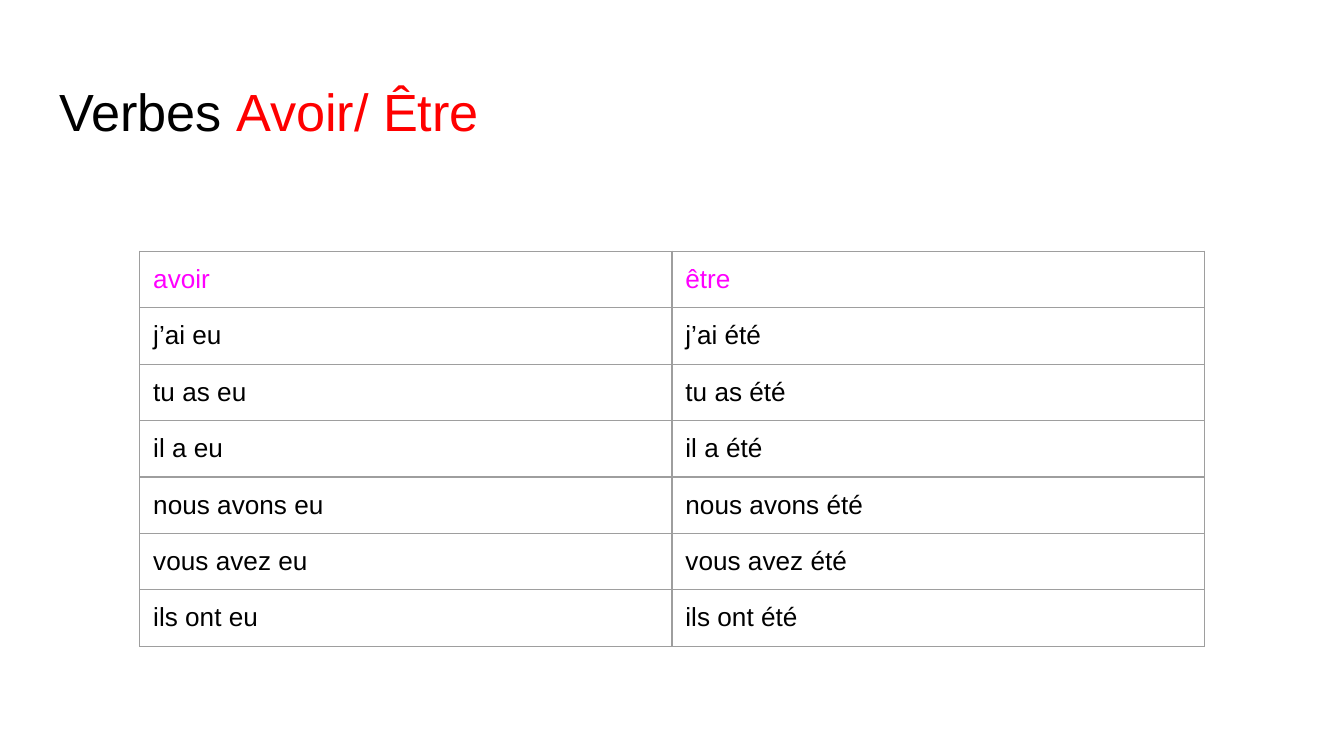
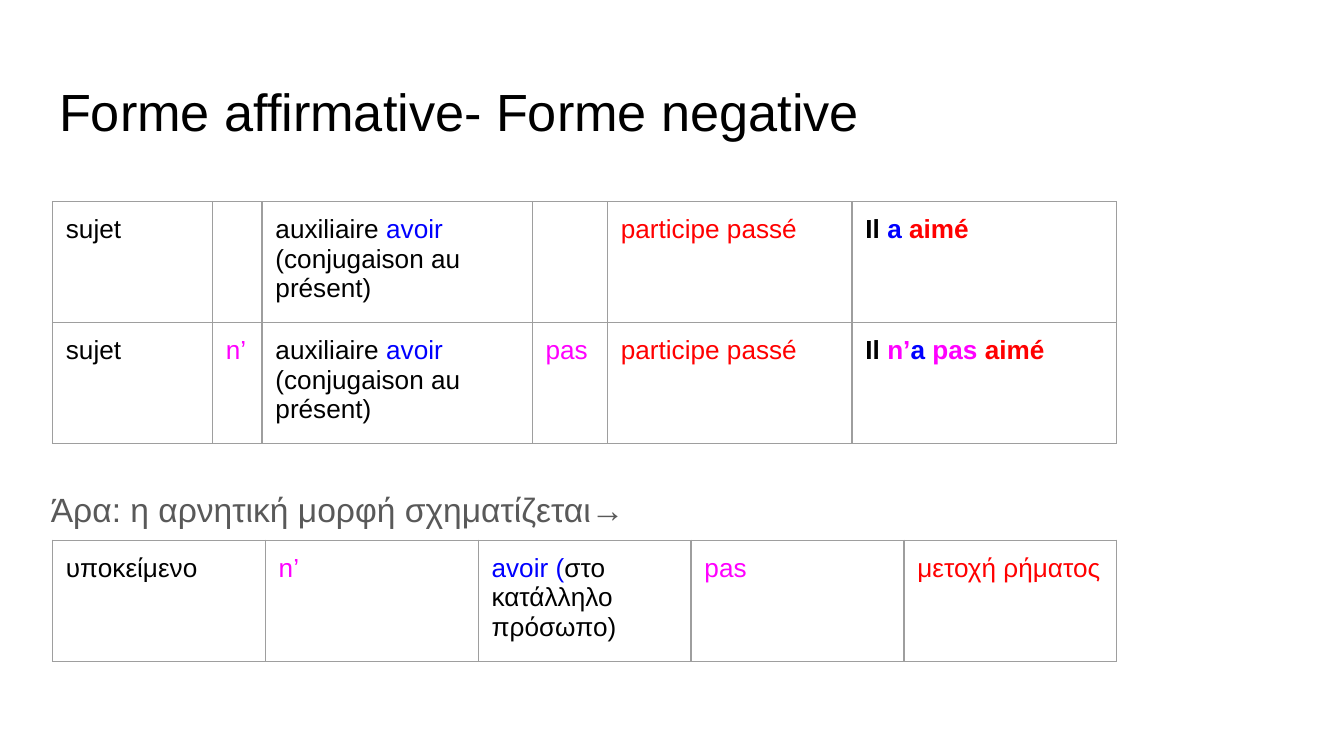
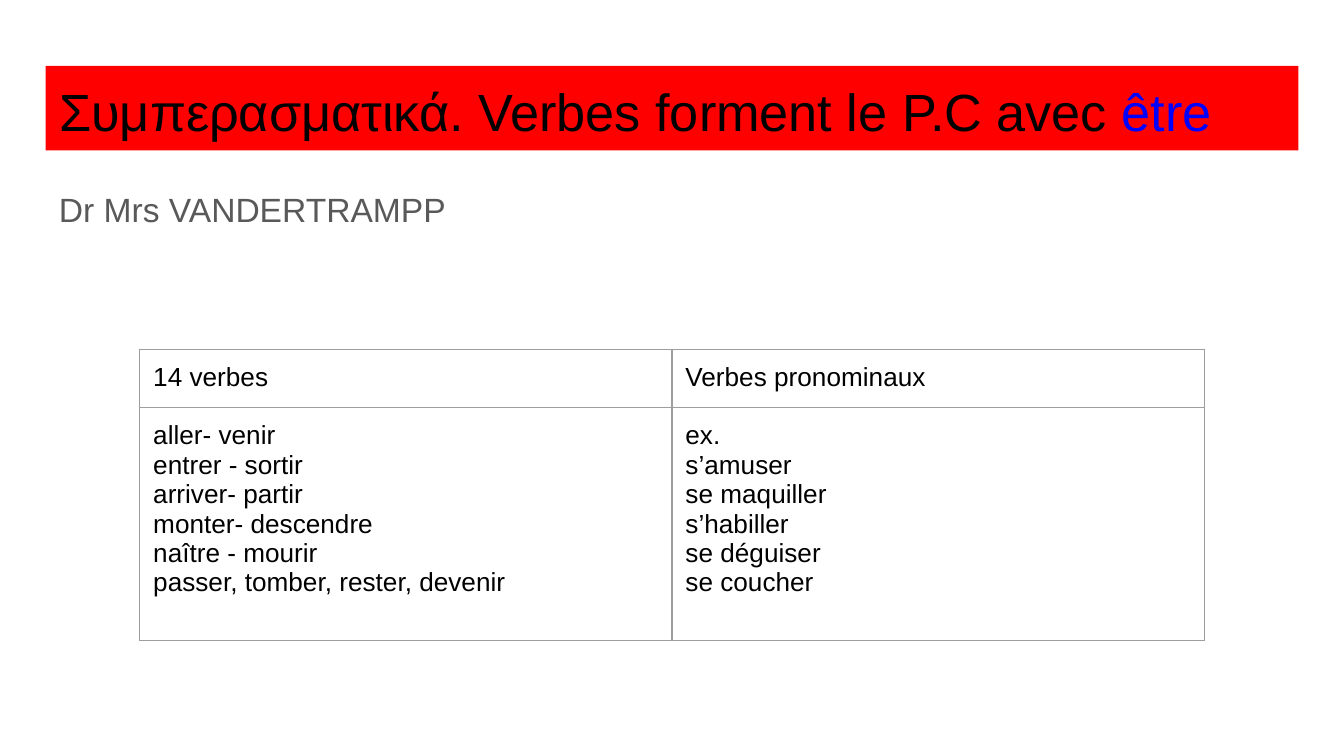
from pptx import Presentation
from pptx.dml.color import RGBColor
from pptx.enum.text import MSO_ANCHOR, MSO_AUTO_SIZE, PP_ALIGN
from pptx.oxml import parse_xml
from pptx.oxml.ns import nsdecls
from pptx.util import Inches, Pt

COLOURS = {
    "black": "000000",
    "red": "FF0000",
    "blue": "0000FF",
    "pink": "FF00FF",
    "grey": "595959",
    "border": "9E9E9E",
}
FONT = "Arial"
MARGIN = Inches(0.1)
TABLE_WIDTH = 7.92
ROW_HEIGHT = 0.42


def write_text(text_frame, paragraphs, size):
    text_frame.word_wrap = True
    for index, runs in enumerate(paragraphs):
        paragraph = text_frame.paragraphs[0] if index == 0 else text_frame.add_paragraph()
        paragraph.alignment = PP_ALIGN.LEFT
        for text, colour in runs:
            run = paragraph.add_run()
            run.text = text
            run.font.name = FONT
            run.font.size = Pt(size)
            run.font.color.rgb = RGBColor.from_string(COLOURS[colour])


def add_bordered_table(slide, left, top, widths, heights, rows):
    table = slide.shapes.add_table(
        len(heights), len(widths), Inches(left), Inches(top),
        Inches(sum(widths)), Inches(sum(heights)),
    ).table
    table.first_row = False
    table.horz_banding = False
    for column, width in zip(table.columns, widths):
        column.width = Inches(width)
    for table_row, height, row in zip(table.rows, heights, rows):
        table_row.height = Inches(height)
        for cell, paragraphs in zip(table_row.cells, row):
            cell.margin_left = cell.margin_right = MARGIN
            cell.margin_top = cell.margin_bottom = MARGIN
            properties = cell._tc.get_or_add_tcPr()
            for side in ("lnL", "lnR", "lnT", "lnB"):
                properties.append(parse_xml(
                    f'<a:{side} {nsdecls("a")} w="{Pt(0.75)}"><a:solidFill>'
                    f'<a:srgbClr val="{COLOURS["border"]}"/></a:solidFill></a:{side}>'
                ))
            cell.fill.background()
            write_text(cell.text_frame, paragraphs, 14)
    return table


presentation = Presentation()
presentation.slide_width = Inches(10)
presentation.slide_height = presentation.slide_width * 9 // 16

titles = [
    [("Verbes ", "black"), ("Avoir/ Être", "red")],
    [("Forme affirmative- Forme negative", "black")],
    [("Συμπερασματικά. Verbes forment le P.C avec ", "black"), ("être", "blue")],
]
slides = []
for title_runs in titles:
    slide = presentation.slides.add_slide(presentation.slide_layouts[5])
    title = slide.shapes.title
    title.left, title.top = Inches(0.34), Inches(0.49)
    title.width, title.height = Inches(9.32), Inches(0.63)
    text_frame = title.text_frame
    text_frame.margin_left = text_frame.margin_right = MARGIN
    text_frame.margin_top = text_frame.margin_bottom = MARGIN
    text_frame.vertical_anchor = MSO_ANCHOR.TOP
    text_frame.auto_size = MSO_AUTO_SIZE.NONE
    write_text(text_frame, [title_runs], 28)
    slides.append(slide)
verbs_slide, forms_slide, summary_slide = slides

summary_title = summary_slide.shapes.title
summary_title.fill.solid()
summary_title.fill.fore_color.rgb = RGBColor.from_string(COLOURS["red"])

body_texts = [
    (forms_slide, 0.28, 3.49, "Άρα: η αρνητική μορφή σχηματίζεται→"),
    (summary_slide, 0.34, 1.26, "Dr Mrs VANDERTRAMPP"),
]
for slide, left, top, text in body_texts:
    text_box = slide.shapes.add_textbox(Inches(left), Inches(top), Inches(9.32), Inches(0.53))
    text_frame = text_box.text_frame
    text_frame.margin_left = text_frame.margin_right = MARGIN
    text_frame.margin_top = text_frame.margin_bottom = MARGIN
    write_text(text_frame, [[(text, "grey")]], 18)
    text_frame.paragraphs[0].line_spacing = 1.15

half_widths = [TABLE_WIDTH / 2] * 2

auxiliaries = ["j’ai", "tu as", "il a", "nous avons", "vous avez", "ils ont"]
verb_rows = [[[[("avoir", "pink")]], [[("être", "pink")]]]]
for auxiliary in auxiliaries:
    verb_rows.append([[[(f"{auxiliary} {participle}", "black")]] for participle in ("eu", "été")])
add_bordered_table(verbs_slide, 1.04, 1.87, half_widths, [ROW_HEIGHT] * len(verb_rows), verb_rows)

subject = [[("sujet", "black")]]
auxiliary_avoir = [
    [("auxiliaire ", "black"), ("avoir", "blue")],
    [("(conjugaison au présent)", "black")],
]
past_participle = [[("participe passé", "red")]]
negation_start = [[("n’", "pink")]]
negation_end = [[("pas", "pink")]]
affirmative_example = [[("Il ", "black"), ("a ", "blue"), ("aimé", "red")]]
negative_example = [
    [("Il ", "black"), ("n’", "pink"), ("a ", "blue"), ("pas ", "pink"), ("aimé", "red")]
]
form_rows = [
    [subject, [], auxiliary_avoir, [], past_participle, affirmative_example],
    [subject, negation_start, auxiliary_avoir, negation_end, past_participle, negative_example],
]
forms_table = add_bordered_table(
    forms_slide, 0.39, 1.5, [1.19, 0.37, 2.01, 0.56, 1.82, 1.97], [0.67] * 2, form_rows
)
for row in forms_table.rows:
    for run in row.cells[5].text_frame.paragraphs[0].runs:
        run.font.bold = True

negation_row = [
    [[("υποκείμενο", "black")]],
    negation_start,
    [[("avoir (", "blue"), ("στο κατάλληλο πρόσωπο)", "black")]],
    negation_end,
    [[("μετοχή ρήματος", "red")]],
]
add_bordered_table(forms_slide, 0.39, 4.02, [TABLE_WIDTH / 5] * 5, [ROW_HEIGHT], [negation_row])

paired_verbs = [
    "aller- venir",
    "entrer - sortir",
    "arriver- partir",
    "monter- descendre",
    "naître - mourir",
    "passer, tomber, rester, devenir",
]
pronominal_verbs = ["ex.", "s’amuser", "se maquiller", "s’habiller", "se déguiser", "se coucher"]
summary_rows = [
    [[[(line, "black")] for line in lines] for lines in row]
    for row in (
        [["14 verbes"], ["Verbes pronominaux"]],
        [paired_verbs, pronominal_verbs],
    )
]
add_bordered_table(summary_slide, 1.04, 2.6, half_widths, [ROW_HEIGHT, 1.73], summary_rows)

presentation.save("out.pptx")
